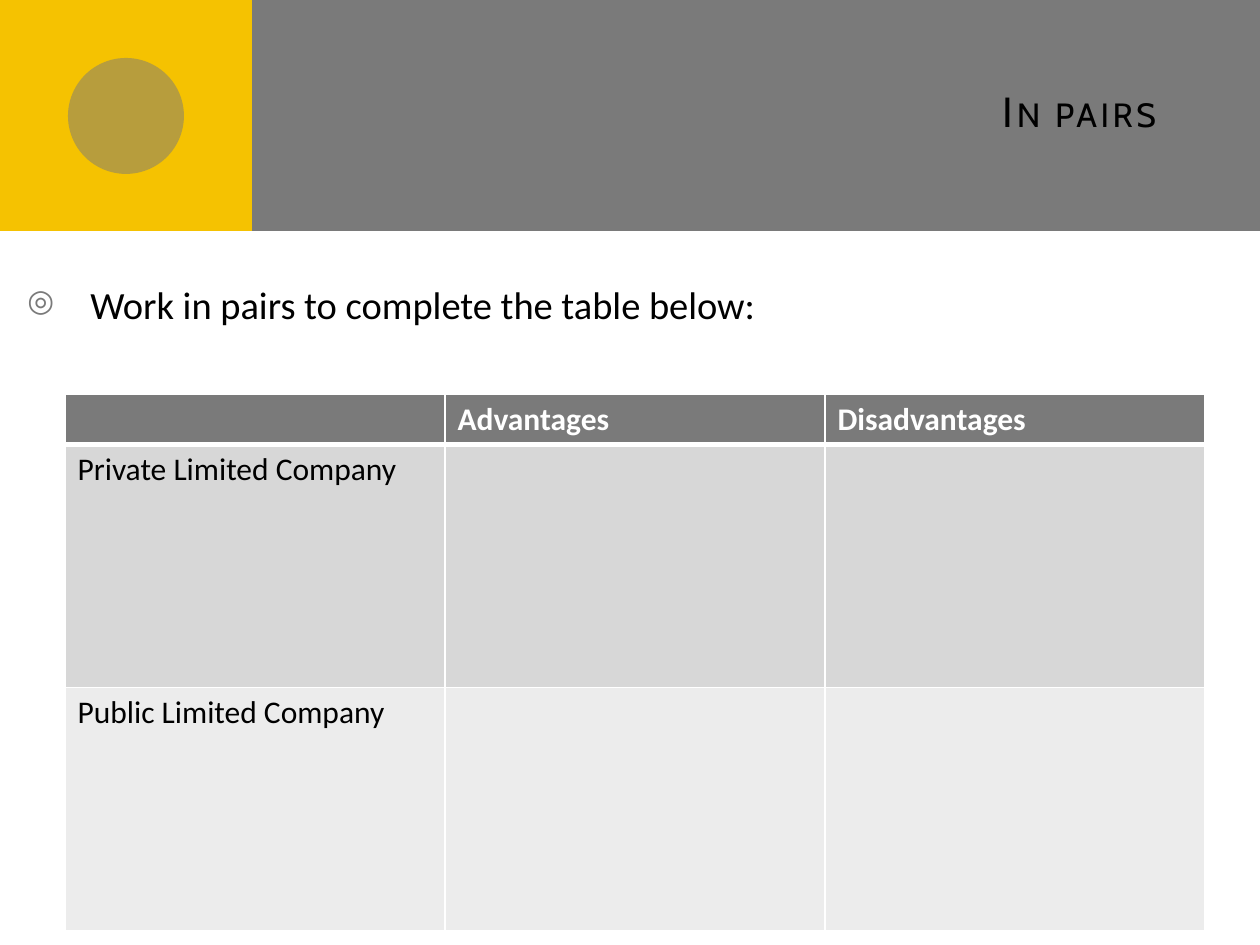
from dataclasses import dataclass
from typing import Optional

from lxml.etree import SubElement
from pptx import Presentation
from pptx.dml.color import RGBColor
from pptx.enum.shapes import MSO_SHAPE as Form
from pptx.enum.text import MSO_ANCHOR as Anchor, PP_ALIGN as Align
from pptx.oxml.ns import qn
from pptx.util import Pt


@dataclass(frozen=True)
class Theme:
    gray: str = "7A7A7A"
    gold: str = "F5C201"
    dark: str = "D7D7D7"
    pale: str = "ECECEC"
    ink: str = "000000"
    white: str = "FFFFFF"
    head: str = "Cabin"
    body: str = "Calibri"
    title: int = 24
    lead: int = 22
    cell: int = 18


@dataclass(frozen=True)
class Box:
    left: int
    top: int
    width: int
    height: int


@dataclass(frozen=True)
class Block:
    form: Form
    box: Box
    fill: str
    alpha: Optional[int] = None


@dataclass(frozen=True)
class Row:
    texts: tuple
    height: int
    fill: str
    ink: str
    bold: bool = False
    rule: int = 1


THEME = Theme()
SCALE = 914400 / 126
BLOCKS = (
    Block(Form.RECTANGLE, Box(0, 0, 1260, 231), THEME.gray),
    Block(Form.RECTANGLE, Box(0, 0, 252, 231), THEME.gold),
    Block(Form.OVAL, Box(68, 58, 116, 116), THEME.gray, 50),
)
ROWS = (
    Row(("", "Advantages", "Disadvantages"), 50, THEME.gray, THEME.white, True, 3),
    Row(("Private Limited Company", "", ""), 243, THEME.dark, THEME.ink),
    Row(("Public Limited Company", "", ""), 243, THEME.pale, THEME.ink),
)


def px(size: int) -> int:
    return round(size * SCALE)


def area(box: Box) -> tuple:
    return px(box.left), px(box.top), px(box.width), px(box.height)


def apply(item, values: dict) -> None:
    for name, value in values.items():
        setattr(item, name, value)


def style(font, face: str, size: int, color: str, bold: bool = False) -> None:
    apply(font, {"name": face, "size": Pt(size), "bold": bold})
    font.color.rgb = RGBColor.from_string(color)


def paint(fill, color: str) -> None:
    fill.solid()
    fill.fore_color.rgb = RGBColor.from_string(color)


def node(parent, tag: str, **values: str):
    return SubElement(parent, qn(tag), values)


def draw_block(slide, block: Block) -> None:
    shape = slide.shapes.add_shape(block.form, *area(block.box))
    shape.shadow.inherit = False
    shape.line.fill.background()
    paint(shape.fill, block.fill)
    if block.alpha is not None:
        color = shape.fill._xPr.find(qn("a:solidFill"))[0]
        node(color, "a:alpha", val=str(block.alpha * 1000))


def draw_title(slide, text: str, box: Box) -> None:
    title = slide.shapes.title
    names = ("left", "top", "width", "height")
    apply(title, dict(zip(names, area(box))))
    frame = title.text_frame
    frame.vertical_anchor = Anchor.MIDDLE
    para = frame.paragraphs[0]
    para.alignment = Align.RIGHT
    run = para.add_run()
    run.text = text
    style(run.font, THEME.head, THEME.title, THEME.ink)
    props = run._r.get_or_add_rPr()
    props.set("cap", "small")
    props.set("spc", "200")
    slide.shapes._spTree.append(title._element)


def draw_lead(slide, text: str, box: Box) -> None:
    frame = slide.shapes.add_textbox(*area(box)).text_frame
    frame.word_wrap = True
    para = frame.paragraphs[0]
    para.space_before = Pt(18)
    run = para.add_run()
    run.text = text
    style(run.font, THEME.body, THEME.lead, THEME.ink)
    props = para._p.get_or_add_pPr()
    props.set("marL", str(px(63)))
    props.set("indent", str(px(-63)))
    node(node(props, "a:buClr"), "a:srgbClr", val=THEME.gray)
    node(props, "a:buSzPct", val="80000")
    node(props, "a:buChar", char="◎")


def edge(cell, side: str, width: int) -> None:
    line = node(cell._tc.get_or_add_tcPr(), f"a:ln{side}", w=str(Pt(width)))
    node(node(line, "a:solidFill"), "a:srgbClr", val=THEME.white)


def draw_table(slide, rows: tuple, box: Box) -> None:
    count = len(rows[0].texts)
    table = slide.shapes.add_table(len(rows), count, *area(box)).table
    for col in table.columns:
        col.width = px(box.width // count)
    above = 1
    for i, row in enumerate(rows):
        table.rows[i].height = px(row.height)
        for j, text in enumerate(row.texts):
            cell = table.cell(i, j)
            for side, width in zip("LRTB", (1, 1, above, row.rule)):
                edge(cell, side, width)
            paint(cell.fill, row.fill)
            para = cell.text_frame.paragraphs[0]
            style(para.font, THEME.body, THEME.cell, row.ink, row.bold)
            if text:
                run = para.add_run()
                run.text = text
                style(run.font, THEME.body, THEME.cell, row.ink, row.bold)
        above = row.rule


def main() -> None:
    deck = Presentation()
    apply(deck, {"slide_width": px(1260), "slide_height": px(945)})
    slide = deck.slides.add_slide(deck.slide_layouts[5])
    for block in BLOCKS:
        draw_block(slide, block)
    draw_title(slide, "In pairs", Box(336, 32, 861, 157))
    draw_lead(slide, "Work in pairs to complete the table below:", Box(15, 275, 861, 529))
    draw_table(slide, ROWS, Box(65, 394, 1140, 536))
    deck.save("out.pptx")


if __name__ == "__main__":
    main()
